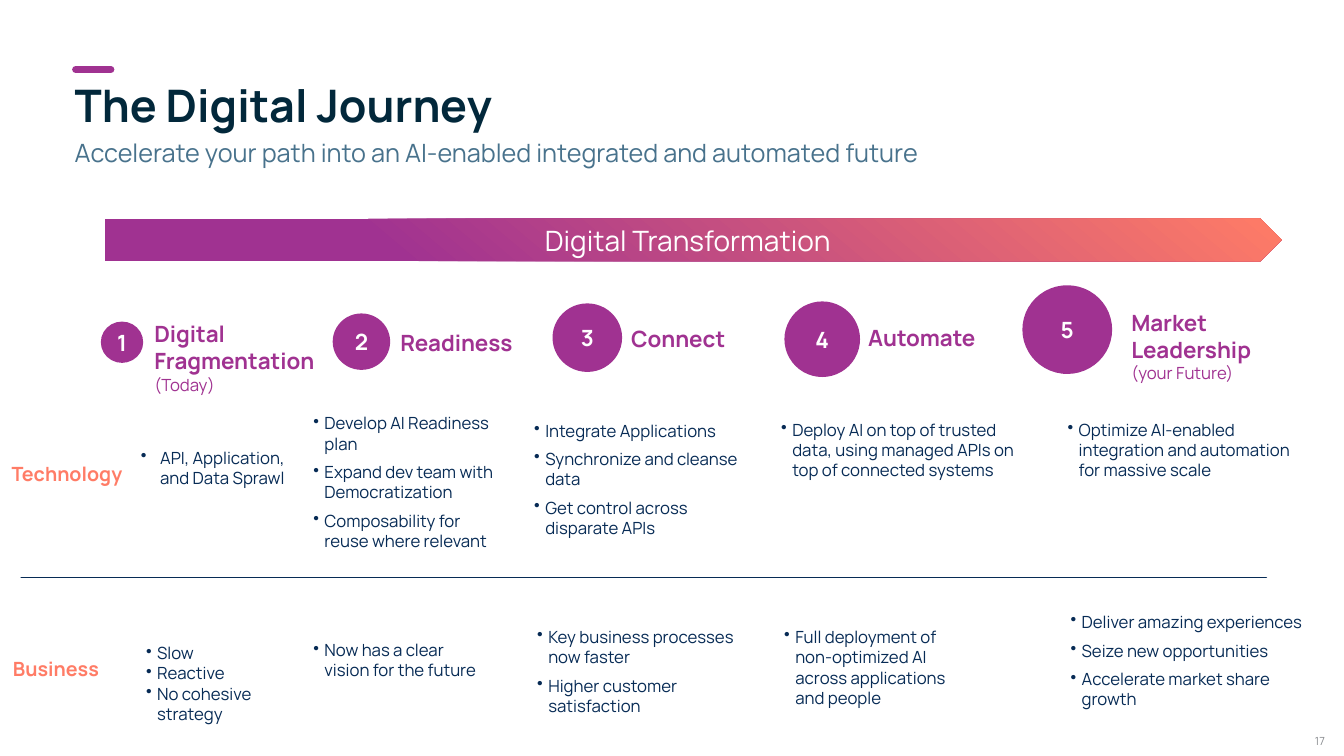
"""Build the Digital Journey slide: five stages seen from technology and business."""
from dataclasses import dataclass

from lxml import etree
from pptx import Presentation
from pptx.dml.color import RGBColor as RGB
from pptx.enum.shapes import MSO_CONNECTOR as CONN, MSO_SHAPE as SHAPE
from pptx.enum.text import MSO_ANCHOR as ANCHOR, PP_ALIGN as ALIGN
from pptx.oxml.ns import qn
from pptx.util import Inches, Pt


@dataclass(frozen=True)
class Theme:
    font: str = "Manrope"
    purple: str = "A03291"
    coral: str = "FF7C66"
    navy: str = "072B55"
    ink: str = "02283B"
    steel: str = "48728C"
    grey: str = "888B8F"
    white: str = "FFFFFF"
    title: int = 32
    banner: int = 20
    subtitle: int = 18
    stage: int = 16
    row: int = 14
    body: int = 12
    number: int = 8


T = Theme()


def write(tf, *lines, size=T.body, color=T.navy, bold=False, align=ALIGN.LEFT,
          anchor=ANCHOR.TOP, inset=(0.1, 0.05, 0.1, 0.05), indent=0, gap=0, leading=None):
    """Append lines to a text frame as formatted paragraphs."""
    tf.word_wrap = True
    tf.vertical_anchor = anchor
    tf.margin_left, tf.margin_top, tf.margin_right, tf.margin_bottom = map(Inches, inset)
    for text in lines:
        first = not tf.text
        p = tf.paragraphs[0] if first else tf.add_paragraph()
        p.alignment = align
        p.line_spacing = leading
        if gap and not first:
            p.space_before = Pt(gap)
        if indent:
            pPr = p._p.get_or_add_pPr()
            pPr.set("marL", str(Inches(indent)))
            pPr.set("indent", str(-Inches(indent)))
            etree.SubElement(pPr, qn("a:buChar")).set("char", "•")
        r = p.add_run()
        r.text = text
        r.font.name, r.font.size, r.font.bold = T.font, Pt(size), bold
        r.font.color.rgb = RGB.from_string(color)


prs = Presentation()
prs.slide_width, prs.slide_height = Inches(13.33), Inches(7.5)
s = prs.slides.add_slide(prs.slide_layouts[6])

for x1, x2, y, color, width in [(0.75, 1.1, 0.69, T.purple, 5), (0.21, 12.56, 5.73, T.navy, 1)]:
    rule = s.shapes.add_connector(CONN.STRAIGHT, Inches(x1), Inches(y), Inches(x2), Inches(y))
    rule.line.color.rgb = RGB.from_string(color)
    rule.line.width = Pt(width)
    rule.line._get_or_add_ln().set("cap", "rnd")
    etree.SubElement(rule._element.spPr, qn("a:effectLst"))

labels = [
    ((0.74, 0.78, 11.85, 0.53), "The Digital Journey",
     dict(size=T.title, color=T.ink, bold=True, inset=(0, 0.05, 0.1, 0.05), leading=0.9)),
    ((0.74, 1.31, 11.85, 0.4), "Accelerate your path into an AI-enabled integrated and automated future",
     dict(size=T.subtitle, color=T.steel, anchor=ANCHOR.MIDDLE, inset=(0, 0.05, 0.1, 0.05))),
    ((0, 4.53, 1.33, 0.34), "Technology",
     dict(size=T.row, color=T.coral, bold=True, align=ALIGN.CENTER, inset=(0, 0.05, 0, 0.05))),
    ((0, 6.47, 1.11, 0.34), "Business",
     dict(size=T.row, color=T.coral, bold=True, align=ALIGN.CENTER, inset=(0, 0.05, 0, 0.05))),
    ((12.56, 7.25, 0.68, 0.21), "17",
     dict(size=T.number, color=T.grey, align=ALIGN.RIGHT, anchor=ANCHOR.MIDDLE)),
]
for box, text, style in labels:
    write(s.shapes.add_textbox(*map(Inches, box)).text_frame, text, **style)

banner = s.shapes.add_shape(SHAPE.PENTAGON, *map(Inches, (1.04, 2.17, 11.67, 0.42)))
banner.shadow.inherit = False
banner.line.fill.background()
banner.fill.gradient()
banner.fill.gradient_angle = 50
for stop, (position, color) in zip(banner.fill.gradient_stops, [(0.24, T.purple), (1, T.coral)]):
    stop.position = position
    stop.color.rgb = RGB.from_string(color)
write(banner.text_frame, "Digital Transformation", size=T.banner, color=T.white,
      align=ALIGN.CENTER, anchor=ANCHOR.MIDDLE)

stages = [
    dict(circle=(1, 3.19, 0.42, 0.41), head=(1.53, 3.18, 1.88, 0.88),
         name=["Digital", "Fragmentation"], note=["(Today)"],
         bullets=[((1.3, 4.39, 1.71, 0.71), 0.19, 0, ["API, Application, and Data Sprawl"]),
                  ((1.35, 6.33, 1.52, 0.91), 0.11, 0, ["Slow", "Reactive", "No cohesive strategy"])]),
    dict(circle=(3.3, 3.11, 0.57, 0.56), head=(3.97, 3.27, 1.51, 0.4),
         name=["Readiness"], note=[],
         bullets=[((3.01, 4.05, 2.12, 1.48), 0.11, 6,
                   ["Develop AI Readiness plan", "Expand dev team with Democratization",
                    "Composability for reuse where relevant"]),
                  ((3.01, 6.3, 1.95, 0.5), 0.11, 6, ["Now has a clear vision for the future"])]),
    dict(circle=(5.48, 3.01, 0.69, 0.68), head=(6.26, 3.23, 1.52, 0.3),
         name=["Connect"], note=[],
         bullets=[((5.2, 4.12, 2.44, 1.28), 0.11, 6,
                   ["Integrate Applications", "Synchronize and cleanse data",
                    "Get control across disparate APIs"]),
                  ((5.23, 6.17, 2.25, 0.99), 0.11, 6,
                   ["Key business processes now faster", "Higher customer satisfaction"])]),
    dict(circle=(7.78, 2.99, 0.75, 0.75), head=(8.61, 3.22, 1.52, 0.38),
         name=["Automate"], note=[],
         bullets=[((7.65, 4.11, 2.55, 0.91), 0.11, 6,
                   ["Deploy AI on top of trusted data, using managed APIs on top of connected systems"]),
                  ((7.68, 6.17, 2.04, 0.91), 0.11, 6,
                   ["Full deployment of non-optimized AI across applications and people"])]),
    dict(circle=(10.14, 2.83, 0.89, 0.88), head=(11.22, 3.07, 2.02, 0.88),
         name=["Market", "Leadership"], note=["(your Future)"],
         bullets=[((10.49, 4.11, 2.62, 1.31), 0.11, 6,
                   ["Optimize AI-enabled integration and automation for massive scale"]),
                  ((10.52, 6.02, 2.57, 1.28), 0.11, 6,
                   ["Deliver amazing experiences", "Seize new opportunities",
                    "Accelerate market share growth"])]),
]
for number, stage in enumerate(stages, 1):
    circle = s.shapes.add_shape(SHAPE.OVAL, *map(Inches, stage["circle"]))
    circle.shadow.inherit = False
    circle.fill.solid()
    circle.fill.fore_color.rgb = RGB.from_string(T.purple)
    circle.line.fill.background()
    write(circle.text_frame, str(number), size=T.stage, color=T.white, bold=True,
          align=ALIGN.CENTER, anchor=ANCHOR.MIDDLE, inset=(0, 0.07, 0, 0.07))

    tf = s.shapes.add_textbox(*map(Inches, stage["head"])).text_frame
    write(tf, *stage["name"], size=T.stage, color=T.purple, bold=True, inset=(0, 0, 0.1, 0))
    write(tf, *stage["note"], color=T.purple, inset=(0, 0, 0.1, 0))

    for box, indent, gap, lines in stage["bullets"]:
        tf = s.shapes.add_textbox(*map(Inches, box)).text_frame
        write(tf, *lines, indent=indent, gap=gap)

prs.save("out.pptx")
